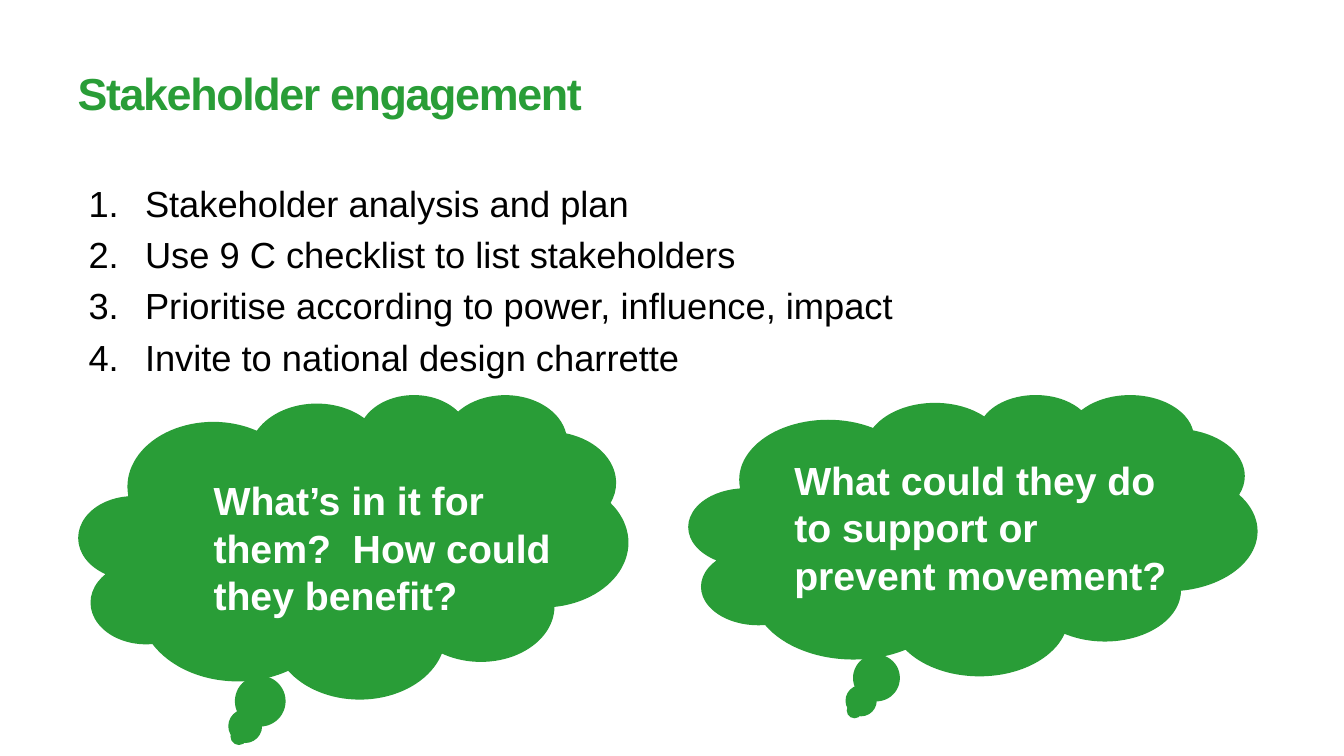
from lxml import etree
from pptx import Presentation
from pptx import util as u
from pptx.dml.color import RGBColor
from pptx.enum import shapes, text
from pptx.oxml.ns import qn

GREEN, BLACK, WHITE = "299D37", "000000", "FFFFFF"


def tint(code):
    return RGBColor.from_string(code)


class Deck:
    face = "Arial"

    def __init__(self, wide, high):
        self.deck = Presentation()
        self.deck.slide_width = u.Inches(wide)
        self.deck.slide_height = u.Inches(high)
        self.slide = self.deck.slides.add_slide(self.deck.slide_layouts[6])

    def place(self, box):
        wide, high = self.deck.slide_width, self.deck.slide_height
        return [int(part * side / 100) for part, side in zip(box, (wide, high) * 2)]

    def label(self, home, box, words, size, color, pitch, bold=False):
        frame = home.add_textbox(*self.place(box)).text_frame
        frame.word_wrap = True
        frame.text = words
        for line in frame.paragraphs:
            line.line_spacing = u.Pt(pitch)
            for run in line.runs:
                font = run.font
                font.name, font.size, font.bold = self.face, u.Pt(size), bold
                font.color.rgb = tint(color)
        return frame

    def title(self, box, words):
        frame = self.label(self.slide.shapes, box, words, 32, GREEN, 38, True)
        frame.vertical_anchor = text.MSO_ANCHOR.MIDDLE
        frame.paragraphs[0].runs[0].font._element.set("spc", "-100")

    def steps(self, box, items):
        frame = self.label(self.slide.shapes, box, "\n".join(items), 25.9, BLACK, 31.3)
        for rank, line in enumerate(frame.paragraphs):
            if rank:
                line.space_before = u.Pt(5.2)
            props = line._p.get_or_add_pPr()
            props.set("marL", str(u.Inches(0.56)))
            props.set("indent", str(u.Inches(-0.56)))
            etree.SubElement(props, qn("a:buFont"), typeface=self.face)
            etree.SubElement(props, qn("a:buAutoNum"), type="arabicPeriod")

    def cloud(self, box, inner, words):
        home = self.slide.shapes.add_group_shape().shapes
        puff = home.add_shape(shapes.MSO_SHAPE.CLOUD_CALLOUT, *self.place(box))
        puff.shadow.inherit = False
        puff.fill.solid()
        puff.fill.fore_color.rgb = tint(GREEN)
        puff.line.fill.background()
        self.label(home, inner, words, 28, WHITE, 34, True)

    def save(self):
        self.deck.save("out.pptx")


def main():
    deck = Deck(13.33, 7.5)
    deck.title((5.03, 4, 56.94, 16.67), "Stakeholder engagement")
    deck.steps((5.85, 23.33, 77.94, 25.47), [
        "Stakeholder analysis and plan",
        "Use 9 C checklist to list stakeholders",
        "Prioritise according to power, influence, impact",
        "Invite to national design charrette",
    ])
    deck.cloud((51.24, 52.13, 42.31, 37.2), (58.36, 59.6, 30.08, 20.13),
               "What could they do to support or prevent movement?")
    deck.cloud((5.85, 52.13, 40.89, 40.27), (15.15, 62.27, 28.96, 20.13),
               "What’s in it for them?  How could they benefit?")
    deck.save()


if __name__ == "__main__":
    main()
